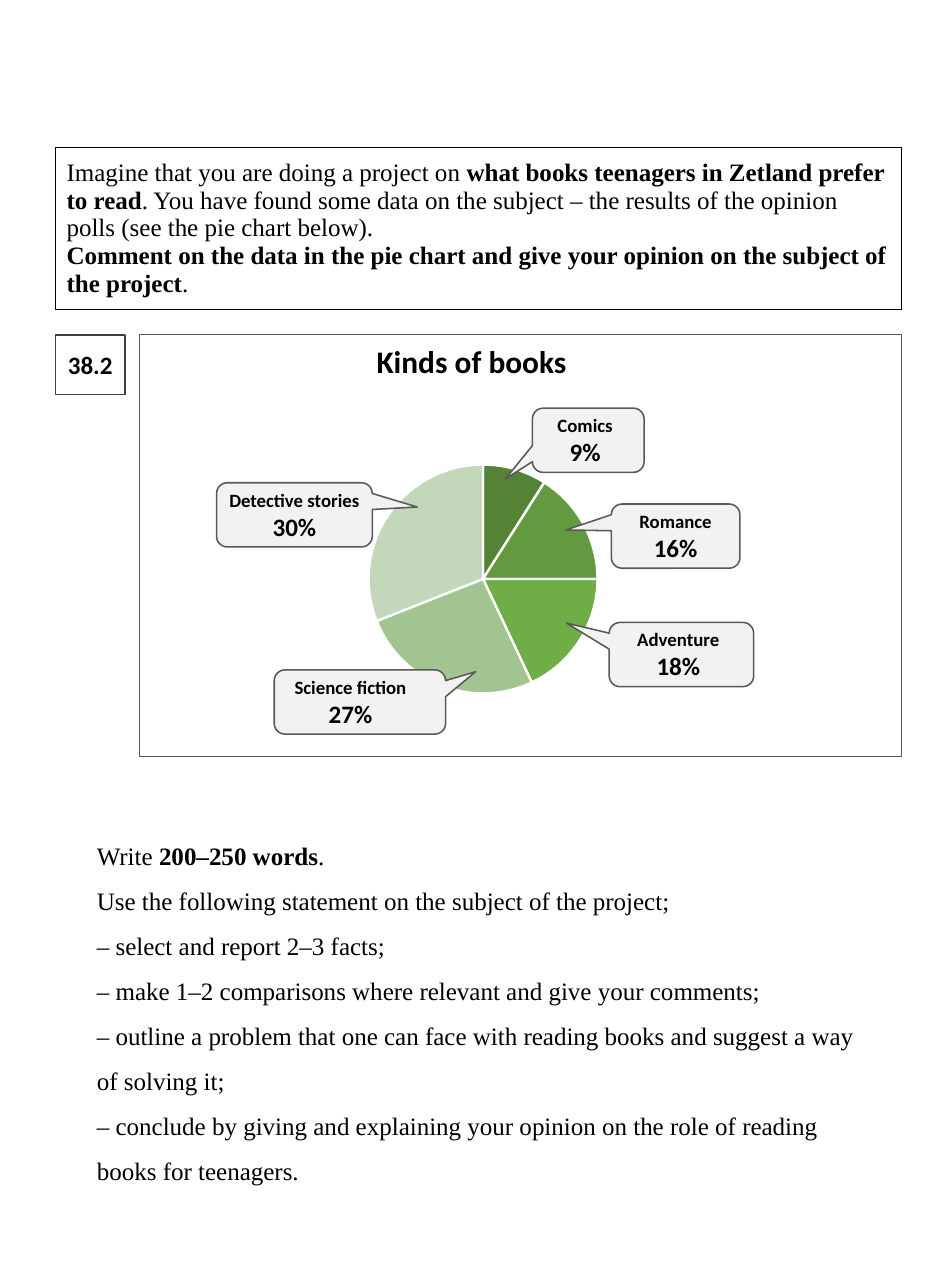
"""Builds an exam task page with a pie chart of the books teenagers read."""
from lxml import etree
from pptx import Presentation, util as u
from pptx.chart.data import CategoryChartData
from pptx.dml.color import RGBColor
from pptx.enum import chart as charts, shapes, text
from pptx.oxml.ns import qn

SERIF, SANS = "Times New Roman", "Calibri"
BLACK, GREY = "000000", "595959"
TASK = [
    [("Imagine that you are doing a project on ", False),
     ("what books teenagers in Zetland prefer to read", True),
     (". You have found some data on the subject – the results of the "
      "opinion polls (see the pie chart below).", False)],
    [("Comment on the data in the pie chart and give your opinion on the "
      "subject of the project", True), (".", False)],
]
PLAN = [
    [("Write ", False), ("200–250 words", True), (".", False)],
    [("Use the following statement on the subject of the project;", False)],
    [("– select and report 2–3 facts;", False)],
    [("– make 1–2 comparisons where relevant and give your comments;", False)],
    [("– outline a problem that one can face with reading books and suggest "
      "a way of solving it;", False)],
    [("– conclude by giving and explaining your opinion on the role of "
      "reading books for teenagers.", False)],
]
SLICES = [(9, "558336"), (16, "639A3F"), (18, "70AD47"),
          (26, "A1C490"), (31, "C3D8BB")]
# name, share, left, top, width, tip across, tip down, right inset
LABELS = [
    ("Detective stories", "30%", 138.2, 308.2, 99.4, 0.788, -0.122, 0),
    ("Science fiction", "27%", 175, 427.7, 109.4, 0.675, -0.471, 12),
    ("Adventure", "18%", 388.8, 397.4, 92.2, -0.796, -0.49, 4),
    ("Romance", "16%", 390.2, 321.8, 82.1, -0.854, -0.096, 0),
    ("Comics", "9%", 339.8, 260.6, 71.3, -0.743, 0.604, 4),
]
LABEL_H = 41
PLOT = {"x": 0.229, "y": 0.231, "w": 0.752, "h": 0.634}


def tint(code):
    return RGBColor.from_string(code)


def write(frame, paras, font, size, align=None, space=None):
    frame.word_wrap = True
    for i, runs in enumerate(paras):
        para = frame.paragraphs[0] if i == 0 else frame.add_paragraph()
        para.alignment = align
        para.line_spacing = space
        for words, bold, *own in runs:
            run = para.add_run()
            run.text = words
            run.font.name, run.font.bold = font, bold
            run.font.size = u.Pt(own[0] if own else size)
            run.font.color.rgb = tint(BLACK)


def add_box(slide, kind, area, fill, line, width):
    box = slide.shapes.add_shape(kind, *map(u.Pt, area))
    box.shadow.inherit = False
    if fill:
        box.fill.solid()
        box.fill.fore_color.rgb = tint(fill)
    else:
        box.fill.background()
    box.line.color.rgb = tint(line)
    box.line.width = u.Pt(width)
    return box


def add_text(slide, area, *style):
    box = slide.shapes.add_textbox(*map(u.Pt, area))
    write(box.text_frame, *style)


def add_task(slide):
    grid = slide.shapes.add_table(1, 1, *map(u.Pt, (35.3, 94.3, 540, 103))).table
    grid.first_row = grid.horz_banding = False
    cell = grid.cell(0, 0)
    cell.fill.background()
    cell.vertical_anchor = text.MSO_ANCHOR.MIDDLE
    write(cell.text_frame, TASK, SERIF, 16)
    props = cell._tc.get_or_add_tcPr()
    for i, side in enumerate("LRTB"):
        edge = etree.Element(qn("a:ln" + side), w=str(u.Pt(0.5)))
        fill = etree.SubElement(edge, qn("a:solidFill"))
        etree.SubElement(fill, qn("a:srgbClr"), val=BLACK)
        props.insert(i, edge)


def add_pie(slide):
    data = CategoryChartData()
    data.categories = [str(i + 1) for i in range(len(SLICES))]
    data.add_series("Series 1", [share for share, _ in SLICES])
    pie = slide.shapes.add_chart(charts.XL_CHART_TYPE.PIE,
                                 *map(u.Pt, (157.7, 243.4, 249, 230.4)), data).chart
    pie.has_title = pie.has_legend = False
    pie.font.name, pie.font.size = SANS, u.Pt(10)
    pie.font.color.rgb = tint(BLACK)
    for i, (_, code) in enumerate(SLICES):
        look = pie.plots[0].series[0].points[i].format
        look.fill.solid()
        look.fill.fore_color.rgb = tint(code)
        look.line.color.rgb = tint("FFFFFF")
        look.line.width = u.Pt(1.5)
    area = pie._chartSpace.find(".//" + qn("c:plotArea"))
    for old in area.findall(qn("c:layout")):
        area.remove(old)
    layout = etree.Element(qn("c:layout"))
    area.insert(0, layout)
    manual = etree.SubElement(layout, qn("c:manualLayout"))
    rules = {"layoutTarget": "inner", "xMode": "edge", "yMode": "edge", **PLOT}
    for name, val in rules.items():
        etree.SubElement(manual, qn("c:" + name), val=str(val))


def add_label(slide, name, share, left, top, width, across, down, inset):
    box = add_box(slide, shapes.MSO_SHAPE.ROUNDED_RECTANGULAR_CALLOUT,
                  (left, top, width, LABEL_H), "F2F2F2", GREY, 1)
    for i, val in enumerate((across, down, 0.167)):
        box.adjustments[i] = val
    frame = box.text_frame
    frame.margin_left = frame.margin_top = frame.margin_bottom = 0
    frame.margin_right = u.Pt(inset)
    frame.vertical_anchor = text.MSO_ANCHOR.MIDDLE
    write(frame, [[(name, True, 12)], [(share, True, 16)]], SANS, 12,
          text.PP_ALIGN.CENTER)


def main():
    deck = Presentation()
    deck.slide_width, deck.slide_height = u.Pt(595.44), u.Pt(822.24)
    slide = deck.slides.add_slide(deck.slide_layouts[6])
    mid, rect = text.PP_ALIGN.CENTER, shapes.MSO_SHAPE.RECTANGLE
    add_task(slide)
    badge = add_box(slide, rect, (35.3, 213.8, 44.6, 38.2), "FFFFFF", "404040", 1)
    badge.text_frame.margin_left = badge.text_frame.margin_right = 0
    badge.text_frame.vertical_anchor = text.MSO_ANCHOR.MIDDLE
    write(badge.text_frame, [[("38.2", True)]], SANS, 16, mid)
    add_pie(slide)
    add_text(slide, (116.3, 214.6, 369.4, 31.7),
             [[("Kinds of books", True)]], SANS, 20, mid)
    for label in LABELS:
        add_label(slide, *label)
    add_box(slide, rect, (89.3, 213.8, 486, 269.3), None, GREY, 0.75)
    add_text(slide, (54.7, 523.4, 497.5, 236.2), PLAN, SERIF, 16, None, 1.5)
    deck.save("out.pptx")


if __name__ == "__main__":
    main()
